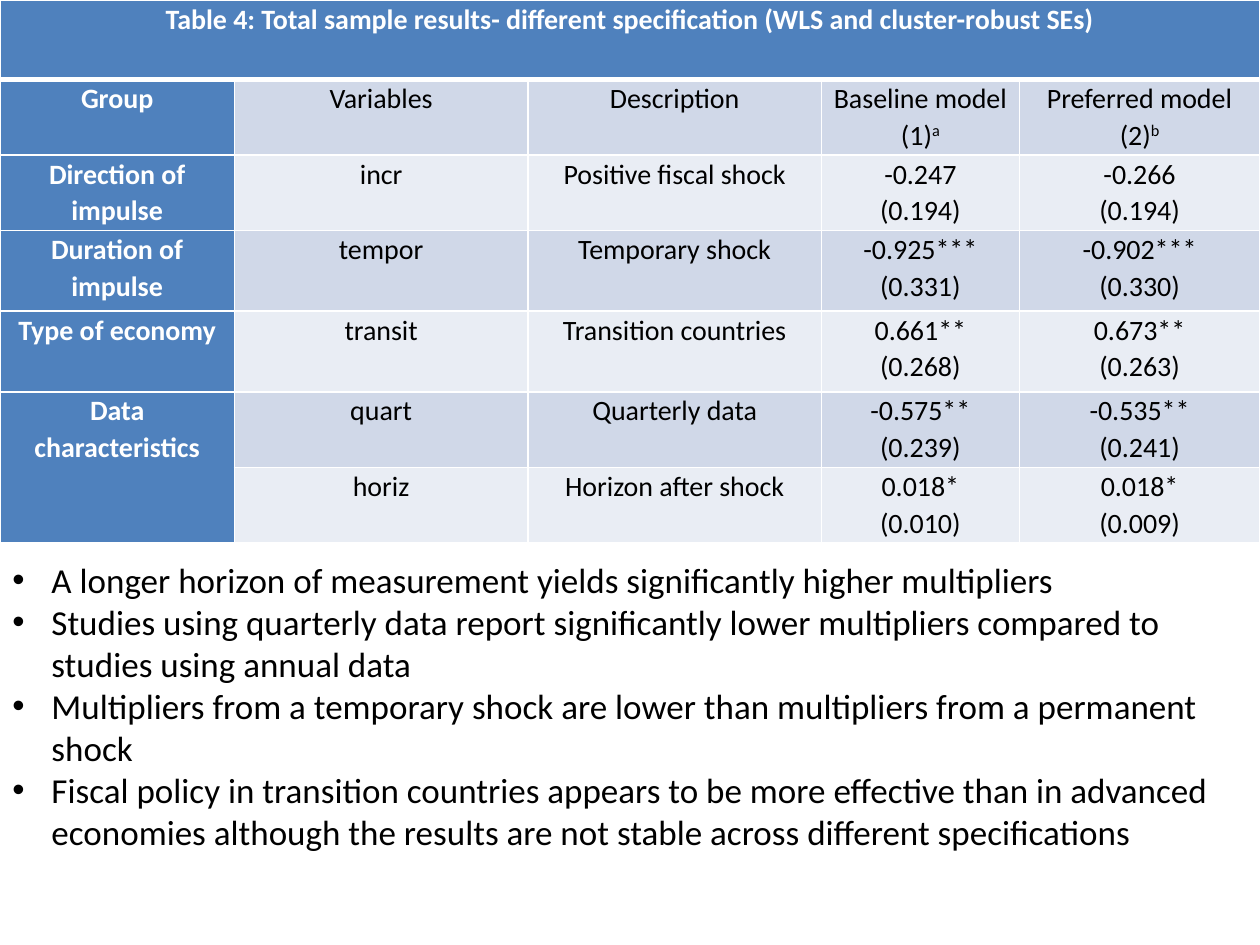
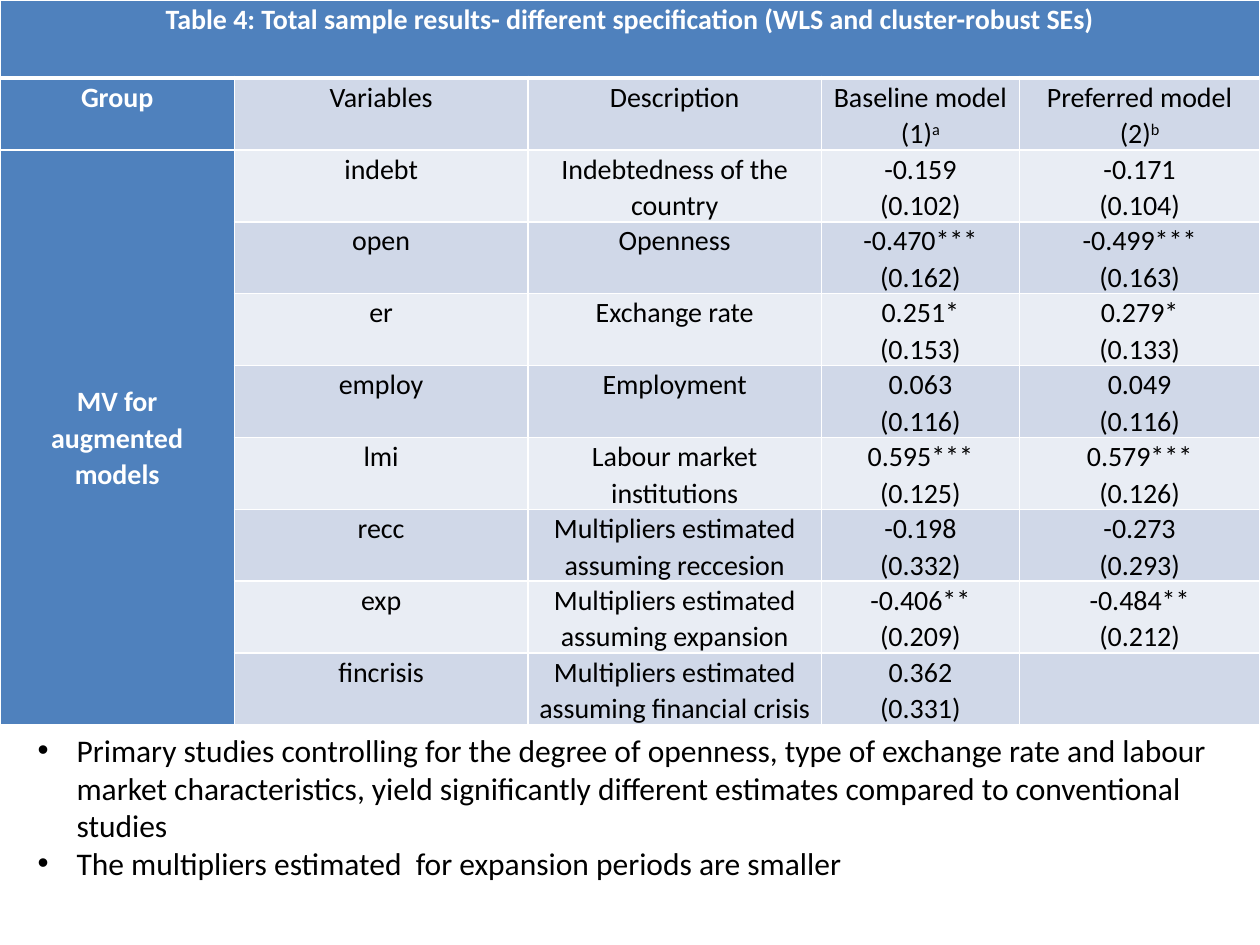
from pptx import Presentation
from pptx.dml.color import RGBColor
from pptx.enum.text import MSO_ANCHOR as Anchor, MSO_AUTO_SIZE as AutoSize, PP_ALIGN as Align
from pptx.oxml.ns import qn
from pptx.util import Inches, Pt
from lxml import etree

# Shared look
FONT = "Calibri"
BLUE, WHITE, BLACK = "4F81BD", "FFFFFF", "000000"
BANDS = ("D0D8E8", "E9EDF4")
COLUMN_WIDTHS = (1.86, 2.33, 2.33, 1.57, 1.91)
CELL_FORMAT = {"margin_left": Inches(0.07), "margin_right": Inches(0.07),
               "margin_top": 0, "margin_bottom": 0}
BULLET_INDENT = Inches(0.31)

# Shared wording
TITLE = "Table 4: Total sample results- different specification (WLS and cluster-robust SEs)"
HEADINGS = ("Group", "Variables", "Description",
            "Baseline model\n(1)^a", "Preferred model\n(2)^b")

# Rows: group (None continues the group above), variable, description, two models
STUDY_ROWS = [
    ("Direction of impulse", "incr", "Positive fiscal shock",
     "-0.247\n(0.194)", "-0.266\n(0.194)"),
    ("Duration of impulse", "tempor", "Temporary shock",
     "-0.925***\n(0.331)", "-0.902***\n(0.330)"),
    ("Type of economy", "transit", "Transition countries",
     "0.661**\n(0.268)", "0.673**\n(0.263)"),
    ("Data characteristics", "quart", "Quarterly data",
     "-0.575**\n(0.239)", "-0.535**\n(0.241)"),
    (None, "horiz", "Horizon after shock", "0.018*\n(0.010)", "0.018*\n(0.009)"),
]
AUGMENTED_ROWS = [
    ("MV for augmented\nmodels", "indebt", "Indebtedness of the country",
     "-0.159\n(0.102)", "-0.171\n(0.104)"),
    (None, "open", "Openness", "-0.470***\n(0.162)", "-0.499***\n(0.163)"),
    (None, "er", "Exchange rate", "0.251*\n(0.153)", "0.279*\n(0.133)"),
    (None, "employ", "Employment", "0.063\n(0.116)", "0.049\n(0.116)"),
    (None, "lmi", "Labour market institutions", "0.595***\n(0.125)", "0.579***\n(0.126)"),
    (None, "recc", "Multipliers estimated assuming reccesion",
     "-0.198\n(0.332)", "-0.273\n(0.293)"),
    (None, "exp", "Multipliers estimated assuming expansion",
     "-0.406**\n(0.209)", "-0.484**\n(0.212)"),
    (None, "fincrisis", "Multipliers estimated assuming financial crisis",
     "0.362\n(0.331)", ""),
]
STUDY_FINDINGS = [
    "A longer horizon of measurement yields significantly higher multipliers",
    "Studies using quarterly data report significantly lower multipliers compared to "
    "studies using annual data",
    "Multipliers from a temporary shock are lower than multipliers from a permanent shock",
    "Fiscal policy in transition countries appears to be more effective than in advanced "
    "economies although the results are not stable across different specifications",
]
AUGMENTED_FINDINGS = [
    "Primary studies controlling for the degree of openness, type of exchange rate and labour "
    "market characteristics, yield significantly different estimates compared to conventional "
    "studies",
    "The multipliers estimated  for expansion periods are smaller",
]


def color(hex_value):
    return RGBColor.from_string(hex_value)


def set_values(target, values):
    for name, value in values.items():
        setattr(target, name, value)


def add_run(paragraph, text, size, hex_value, bold=False):
    run = paragraph.add_run()
    run.text = text
    set_values(run.font, {"name": FONT, "size": Pt(size), "bold": bold})
    run.font.color.rgb = color(hex_value)
    return run


def set_borders(cell, widths):
    """Draw white borders; widths maps L, R, T, B to points."""
    properties = cell._tc.get_or_add_tcPr()
    for side, width in widths.items():
        line = etree.SubElement(properties, qn(f"a:ln{side}"), w=str(Pt(width)))
        fill = etree.SubElement(line, qn("a:solidFill"))
        etree.SubElement(fill, qn("a:srgbClr"), val=WHITE)


def fill_cell(cell, text, row, column):
    """Style a cell by its place; text after ^ is superscript."""
    heading = row == 0 or column == 0
    set_values(cell, CELL_FORMAT)
    set_borders(cell, {"L": 1, "R": 1, "T": 3 if row == 1 else 1, "B": 3 if row == 0 else 1})
    cell.fill.solid()
    cell.fill.fore_color.rgb = color(BLUE if heading else BANDS[(row - 1) % 2])
    if not text:
        return
    for index, line in enumerate(text.split("\n")):
        frame = cell.text_frame
        paragraph = frame.add_paragraph() if index else frame.paragraphs[0]
        set_values(paragraph, {"alignment": Align.CENTER, "line_spacing": 1.07})
        base, _, superscript = line.partition("^")
        style = (16, WHITE if heading else BLACK, heading)
        add_run(paragraph, base, *style)
        if superscript:
            run = add_run(paragraph, superscript, *style)
            run._r.get_or_add_rPr().set("baseline", "30000")


def add_results_table(slide, body, row_heights, group_anchor):
    rows = [(TITLE, None, None, None, None), HEADINGS, *body]
    frame = slide.shapes.add_table(len(rows), len(COLUMN_WIDTHS), 0, 0,
                                   Inches(10), Inches(sum(row_heights)))
    table = frame.table
    set_values(table, {"first_row": False, "horz_banding": False})
    for column, width in zip(table.columns, COLUMN_WIDTHS):
        column.width = Inches(width)
    for table_row, height in zip(table.rows, row_heights):
        table_row.height = Inches(height)
    for row, values in enumerate(rows):
        for column, text in enumerate(values):
            fill_cell(table.cell(row, column), text, row, column)

    # The title spans all columns, the last group all rows that continue it
    table.cell(0, 0).merge(table.cell(0, len(COLUMN_WIDTHS) - 1))
    last_group = max(row for row, values in enumerate(rows) if values[0])
    group_cell = table.cell(last_group, 0)
    group_cell.merge(table.cell(len(rows) - 1, 0))
    group_cell.vertical_anchor = group_anchor


def add_findings(slide, findings, position, size):
    box = slide.shapes.add_textbox(*(Inches(length) for length in position))
    frame = box.text_frame
    set_values(frame, {"word_wrap": True, "auto_size": AutoSize.SHAPE_TO_FIT_TEXT})
    for index, finding in enumerate(findings):
        paragraph = frame.add_paragraph() if index else frame.paragraphs[0]
        add_run(paragraph, finding, size, BLACK)
        properties = paragraph._p.get_or_add_pPr()
        properties.set("marL", str(BULLET_INDENT))
        properties.set("indent", str(-BULLET_INDENT))
        etree.SubElement(properties, qn("a:buFont"), typeface="Arial")
        etree.SubElement(properties, qn("a:buChar"), char="•")


def main():
    presentation = Presentation()
    set_values(presentation, {"slide_width": Inches(10), "slide_height": Inches(7.5)})
    blank = presentation.slide_layouts[6]

    # Slide 1: shock, economy and data variables
    slide = presentation.slides.add_slide(blank)
    add_results_table(slide, STUDY_ROWS, (0.63, 0.6, 0.6, 0.64, 0.64, 0.6, 0.6), Anchor.TOP)
    add_findings(slide, STUDY_FINDINGS, (0, 4.38, 9.88, 2.79), 20)

    # Slide 2: variables of the augmented models
    slide = presentation.slides.add_slide(blank)
    add_results_table(slide, AUGMENTED_ROWS, (0.62, *[0.57] * 9), Anchor.MIDDLE)
    add_findings(slide, AUGMENTED_FINDINGS, (0.2, 5.75, 9.8, 1.31), 18)

    presentation.save("out.pptx")


if __name__ == "__main__":
    main()
